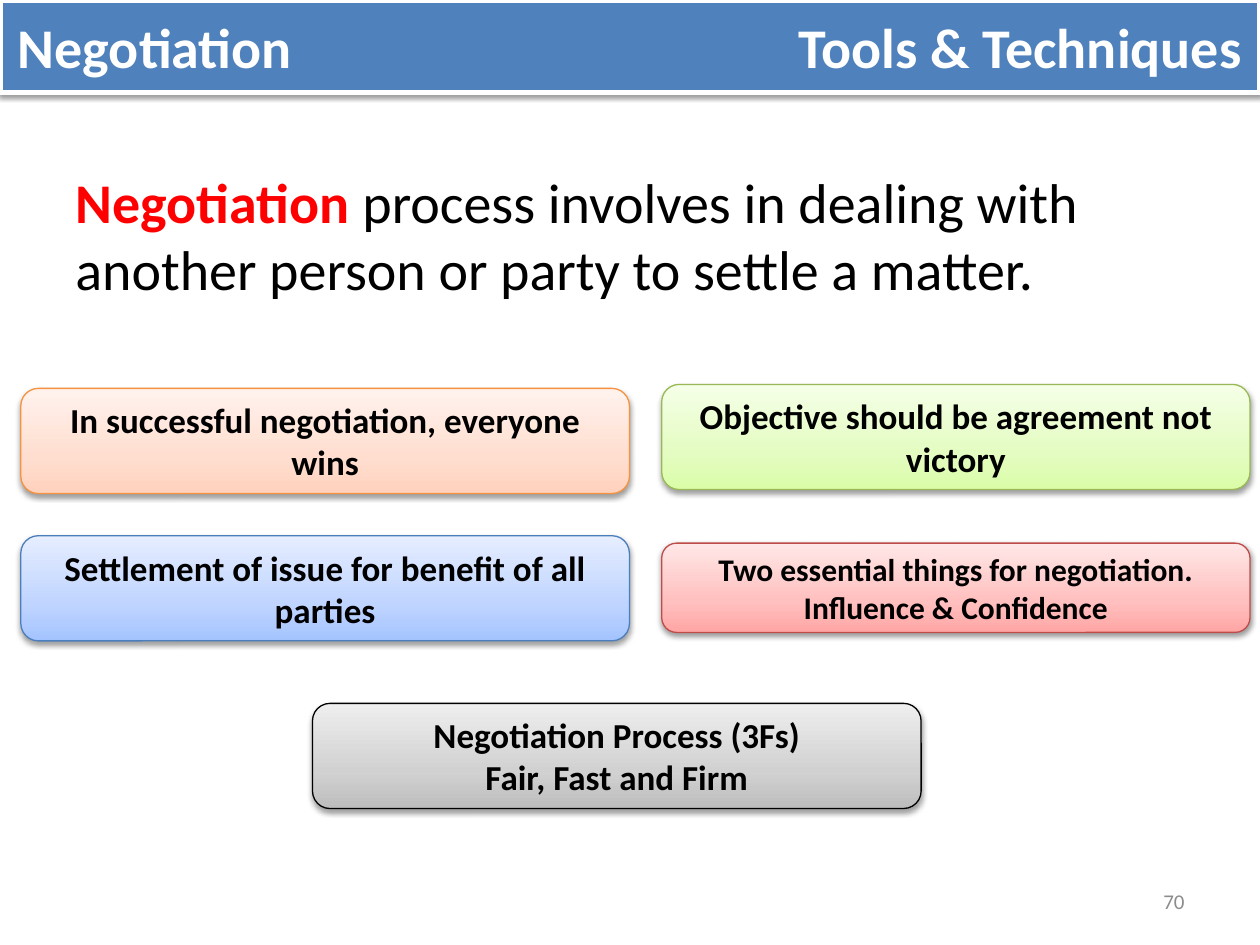
from copy import deepcopy
from dataclasses import dataclass

from lxml import etree
from pptx import Presentation
from pptx.dml.color import RGBColor
from pptx.enum.shapes import MSO_SHAPE
from pptx.enum.text import MSO_ANCHOR, PP_ALIGN
from pptx.oxml.ns import qn
from pptx.util import Cm, Pt

LEFT, CENTER, RIGHT = PP_ALIGN.LEFT, PP_ALIGN.CENTER, PP_ALIGN.RIGHT
TOP, MIDDLE = MSO_ANCHOR.TOP, MSO_ANCHOR.MIDDLE
RECTANGLE, ROUNDED = MSO_SHAPE.RECTANGLE, MSO_SHAPE.ROUNDED_RECTANGLE


@dataclass(frozen=True)
class Theme:
    font: str = "Calibri"
    ink: str = "000000"
    paper: str = "FFFFFF"
    accent: str = "FF0000"
    band: str = "4F81BD"
    muted: str = "8C8C8C"
    heading: int = 32
    card: int = 20
    card_small: int = 18
    footer: int = 12
    inset: float = 0.25


THEME = Theme()
GRADIENT_STOPS = (0, 0.35, 1)
# Outline colour, then gradient colours from the bottom edge upwards
ORANGE = ("F69240", ("FFD2BD", "FFDED0", "FFF2ED"))
GREEN = ("98B955", ("DAFDA7", "E4FCC2", "F5FFE7"))
BLUE = ("4B7EBC", ("A4C4FF", "BFD4FF", "E6EEFF"))
RED = ("BF4C48", ("FFA6A5", "FFC0BF", "FFE7E7"))
GREY = ("000000", ("BDBDBD", "D1D1D1", "EEEEEE"))

LEFT_COLUMN, RIGHT_COLUMN, MIDDLE_COLUMN = (0, 12.27), (12.92, 11.86), (5.88, 12.27)
TALL, SHORT = 2.12, 1.8
# Column, top within the region, height, colours, type size, lines
CARDS = (
    (LEFT_COLUMN, 0.08, TALL, ORANGE, THEME.card,
     ["In successful negotiation, everyone wins"]),
    (RIGHT_COLUMN, 0, TALL, GREEN, THEME.card,
     ["Objective should be agreement not victory"]),
    (LEFT_COLUMN, 3.05, TALL, BLUE, THEME.card,
     ["Settlement of issue for benefit of all parties"]),
    (RIGHT_COLUMN, 3.2, SHORT, RED, THEME.card_small,
     ["Two essential things for negotiation. Influence & Confidence"]),
    (MIDDLE_COLUMN, 6.43, TALL, GREY, THEME.card,
     ["Negotiation Process (3Fs)", "Fair, Fast and Firm"]),
)


def rgb(value):
    return RGBColor.from_string(value)


def add_run(paragraph, text, size, color, bold=False):
    run = paragraph.add_run()
    run.text = text
    formats = {"name": THEME.font, "size": Pt(size), "bold": bold}
    for attribute, value in formats.items():
        setattr(run.font, attribute, value)
    run.font.color.rgb = rgb(color)


def prepare_frame(shape, anchor, side_inset=THEME.inset):
    frame = shape.text_frame
    formats = {"word_wrap": True, "vertical_anchor": anchor,
               "margin_left": Cm(side_inset), "margin_right": Cm(side_inset)}
    for attribute, value in formats.items():
        setattr(frame, attribute, value)
    return frame


def add_panel(slide, kind, box, outline, outline_width):
    """Add an outlined shape with a soft shadow below it."""
    panel = slide.shapes.add_shape(kind, *map(Cm, box))
    panel.line.color.rgb = rgb(outline)
    panel.line.width = Pt(outline_width)
    panel.shadow.inherit = False
    effects = panel._element.spPr.find(qn("a:effectLst"))
    shadow = etree.SubElement(effects, qn("a:outerShdw"), blurRad=str(Pt(3.1)),
                              dist=str(Pt(1.6)), dir="5400000", rotWithShape="0")
    shade = etree.SubElement(shadow, qn("a:srgbClr"), val=THEME.ink)
    etree.SubElement(shade, qn("a:alpha"), val="38000")
    return panel


def fill_gradient(shape, colors):
    shape.fill.gradient()
    shape.fill.gradient_angle = 90
    stop_list = shape._element.spPr.find(qn("a:gradFill")).find(qn("a:gsLst"))
    stop_list.insert(1, deepcopy(stop_list[0]))
    for stop, position, color in zip(shape.fill.gradient_stops, GRADIENT_STOPS, colors):
        stop.position = position
        stop.color.rgb = rgb(color)


def add_header(slide, box, topic, section):
    """Add the band with the topic at its left and the section at its right."""
    side_inset = 0.36
    band = add_panel(slide, RECTANGLE, box, THEME.paper, 3)
    band.fill.solid()
    band.fill.fore_color.rgb = rgb(THEME.band)
    heading = prepare_frame(band, MIDDLE, side_inset).paragraphs[0]
    heading.alignment = LEFT
    tabs = etree.SubElement(heading._p.get_or_add_pPr(), qn("a:tabLst"))
    etree.SubElement(tabs, qn("a:tab"), pos=str(Cm(box[2] - 2 * side_inset)), algn="r")
    add_run(heading, f"{topic}\t{section}", THEME.heading, THEME.paper, True)


def add_definition(slide, box, term, meaning):
    definition = slide.shapes.add_textbox(*map(Cm, box))
    paragraph = prepare_frame(definition, TOP).paragraphs[0]
    add_run(paragraph, term, THEME.heading, THEME.accent, True)
    add_run(paragraph, meaning, THEME.heading, THEME.ink)


def add_cards(slide, box):
    left, top = box[:2]
    for (offset, width), drop, height, (outline, colors), size, lines in CARDS:
        card = add_panel(slide, ROUNDED, (left + offset, top + drop, width, height),
                         outline, 0.75)
        fill_gradient(card, colors)
        frame = prepare_frame(card, MIDDLE)
        for index, line in enumerate(lines):
            paragraph = frame.add_paragraph() if index else frame.paragraphs[0]
            paragraph.alignment = CENTER
            add_run(paragraph, line, size, THEME.ink, True)


def add_page_number(slide, box, number):
    page = slide.shapes.add_textbox(*map(Cm, box))
    paragraph = prepare_frame(page, MIDDLE).paragraphs[0]
    paragraph.alignment = RIGHT
    add_run(paragraph, number, THEME.footer, THEME.muted)


def main():
    presentation = Presentation()
    presentation.slide_width, presentation.slide_height = Cm(25.4), Cm(19.05)
    slide = presentation.slides.add_slide(presentation.slide_layouts[6])
    add_definition(slide, (1.27, 3.25, 22.86, 13.8), "Negotiation",
                   " process involves in dealing with another person or party"
                   " to settle a matter.")
    add_cards(slide, (0.42, 7.75, 24.78, 8.55))
    add_header(slide, (0, 0, 25.4, 1.86), "Negotiation", "Tools & Techniques")
    add_page_number(slide, (18.2, 17.66, 5.93, 1.01), "70")
    presentation.save("out.pptx")


if __name__ == "__main__":
    main()
